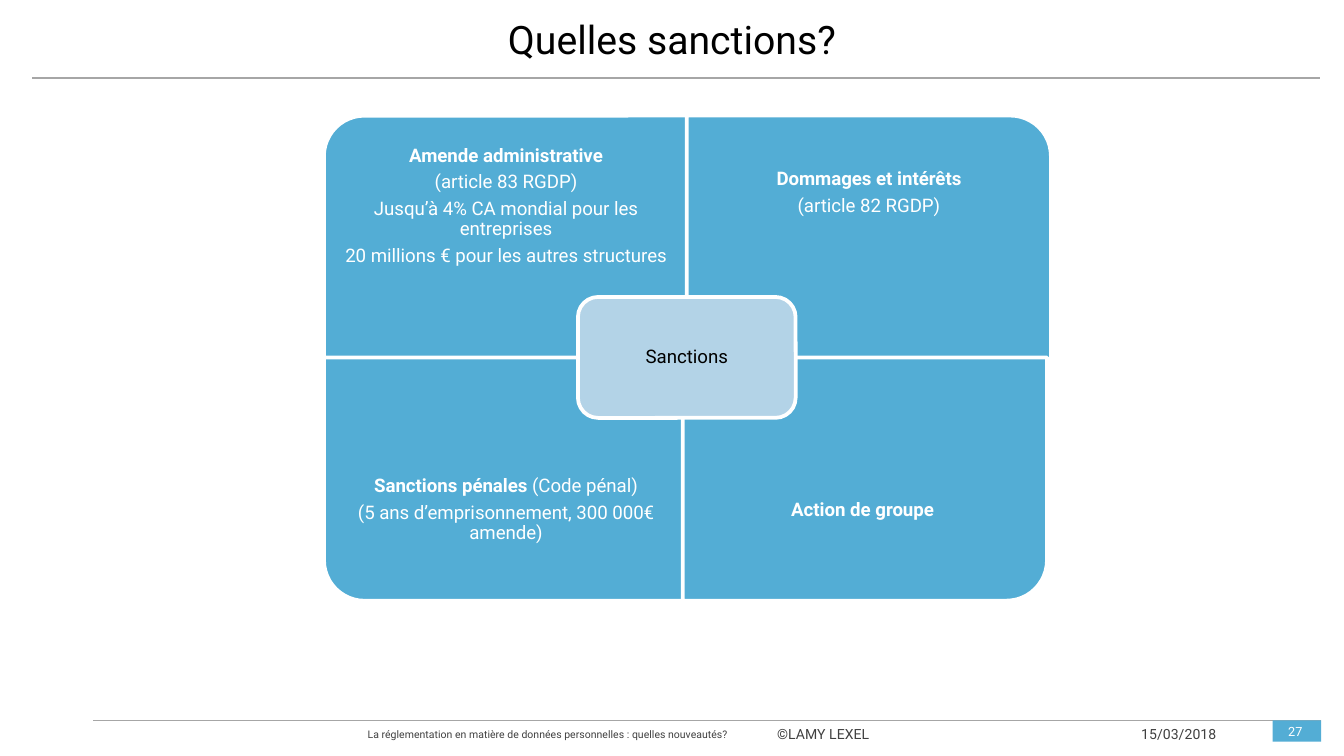
from lxml import etree
from pptx import Presentation
from pptx.dml.color import RGBColor
from pptx.enum import shapes, text
from pptx.oxml.ns import qn
from pptx.util import Inches, Pt

BLUE, PALE, WHITE, BLACK = "53ADD5", "B3D3E7", "FFFFFF", "000000"
GREY, RULE = "404040", "A6A6A6"
KIND, ALIGN, ANCHOR = shapes.MSO_SHAPE, text.PP_ALIGN, text.MSO_ANCHOR
hue = RGBColor.from_string


def write(frame, lines, size, color, align=ALIGN.CENTER, anchor=ANCHOR.MIDDLE,
          pads=(0, 0, 0, 0), tight=False):
    """Fill a frame with lines, each a list of (words, bold) runs."""
    frame.word_wrap = True
    frame.vertical_anchor = anchor
    (frame.margin_left, frame.margin_top,
     frame.margin_right, frame.margin_bottom) = map(Inches, pads)
    for i, runs in enumerate(lines):
        para = frame.paragraphs[0] if i == 0 else frame.add_paragraph()
        para.alignment = align
        if tight:
            para.line_spacing = 0.9
            para.space_after = Pt(3.5)
        for words, bold in runs:
            run = para.add_run()
            run.text = words
            run.font.name = "Roboto"
            run.font.size = Pt(size)
            run.font.bold = bold
            run.font.color.rgb = hue(color)


def block(kind, left, top, wide, high, fill, edge=None):
    shape = slide.shapes.add_shape(kind, *map(Inches, (left, top, wide, high)))
    shape.shadow.inherit = False
    shape.fill.solid()
    shape.fill.fore_color.rgb = hue(fill)
    if edge:
        shape.line.color.rgb = hue(edge)
        shape.line.width = Pt(2)
    else:
        shape.line.fill.background()
    return shape


# A 16:9 slide, 10 inches wide
deck = Presentation()
deck.slide_width = Inches(10)
deck.slide_height = deck.slide_width * 9 // 16
slide = deck.slides.add_slide(deck.slide_layouts[5])

# Title
title = slide.shapes.title
title.left, title.top, title.width, title.height = map(
    Inches, (0.06, 0.04, 9.88, 0.49))
write(title.text_frame, [[("Quelles sanctions?", False)]], 21, BLACK)

# Rules under the title and above the footer
for left, right, y in [(0.24, 9.82, 0.58), (0.69, 9.83, 5.36)]:
    rule = slide.shapes.add_connector(
        shapes.MSO_CONNECTOR.STRAIGHT, *map(Inches, (right, y, left, y)))
    rule.line.color.rgb = hue(RULE)
    rule.line.width = Pt(0.75)
    etree.SubElement(rule._element.spPr, qn("a:effectLst"))

# Footer
footer = [
    (0.67, 5.37, 4.81, 0.18, 5.6, ALIGN.RIGHT,
     "La réglementation en matière de données personnelles : quelles nouveautés?"),
    (5.58, 5.34, 1.12, 0.22, 7.5, ALIGN.CENTER, "©LAMY LEXEL"),
    (8.21, 5.34, 0.91, 0.22, 7.5, ALIGN.RIGHT, "15/03/2018"),
]
for left, top, wide, high, size, align, words in footer:
    box = slide.shapes.add_textbox(*map(Inches, (left, top, wide, high)))
    write(box.text_frame, [[(words, False)]], size, GREY, align,
          ANCHOR.BOTTOM, (0.04, 0.05, 0.07, 0.04))
page = block(KIND.RECTANGLE, 9.47, 5.36, 0.36, 0.16, BLUE)
write(page.text_frame, [[("27 ", False)]], 6.8, WHITE)

# Four tiles, each turned so its round corner points outwards
WIDE, HIGH = 2.71, 1.81
tiles = [  # left, top, turn, text top, text height, lines
    (2.41, 0.86, 270, 0.86, 1.35, [
        [("Amende administrative", True)],
        [("(article 83 RGDP)", False)],
        [("Jusqu’à 4% CA mondial pour les entreprises", False)],
        [("20 millions € pour les autres structures", False)]]),
    (5.11, 0.86, 0, 0.86, 1.15, [
        [("Dommages et intérêts", True)],
        [("(article 82 RGDP)", False)]]),
    (2.41, 2.66, 180, 3.12, 1.35, [
        [("Sanctions pénales ", True), ("(Code pénal)", False)],
        [("(5 ans d’emprisonnement, 300 000€ amende)", False)]]),
    (5.08, 2.66, 90, 3.12, 1.35, [[("Action de groupe ", True)]]),
]
for left, top, turn, head, tall, lines in tiles:
    wide, high = (HIGH, WIDE) if turn in (90, 270) else (WIDE, HIGH)
    tile = block(KIND.ROUND_1_RECTANGLE, left + (WIDE - wide) / 2,
                 top + (HIGH - high) / 2, wide, high, BLUE, WHITE)
    tile.rotation = turn
    box = slide.shapes.add_textbox(*map(Inches, (left, head, WIDE, tall)))
    write(box.text_frame, lines, 10, WHITE, pads=(0.08,) * 4, tight=True)

# Centre label
core = block(KIND.ROUNDED_RECTANGLE, 4.3, 2.21, 1.62, 0.9, PALE, WHITE)
write(core.text_frame, [[("Sanctions", False)]], 10, BLACK,
      pads=(0.04,) * 4, tight=True)

deck.save("out.pptx")
